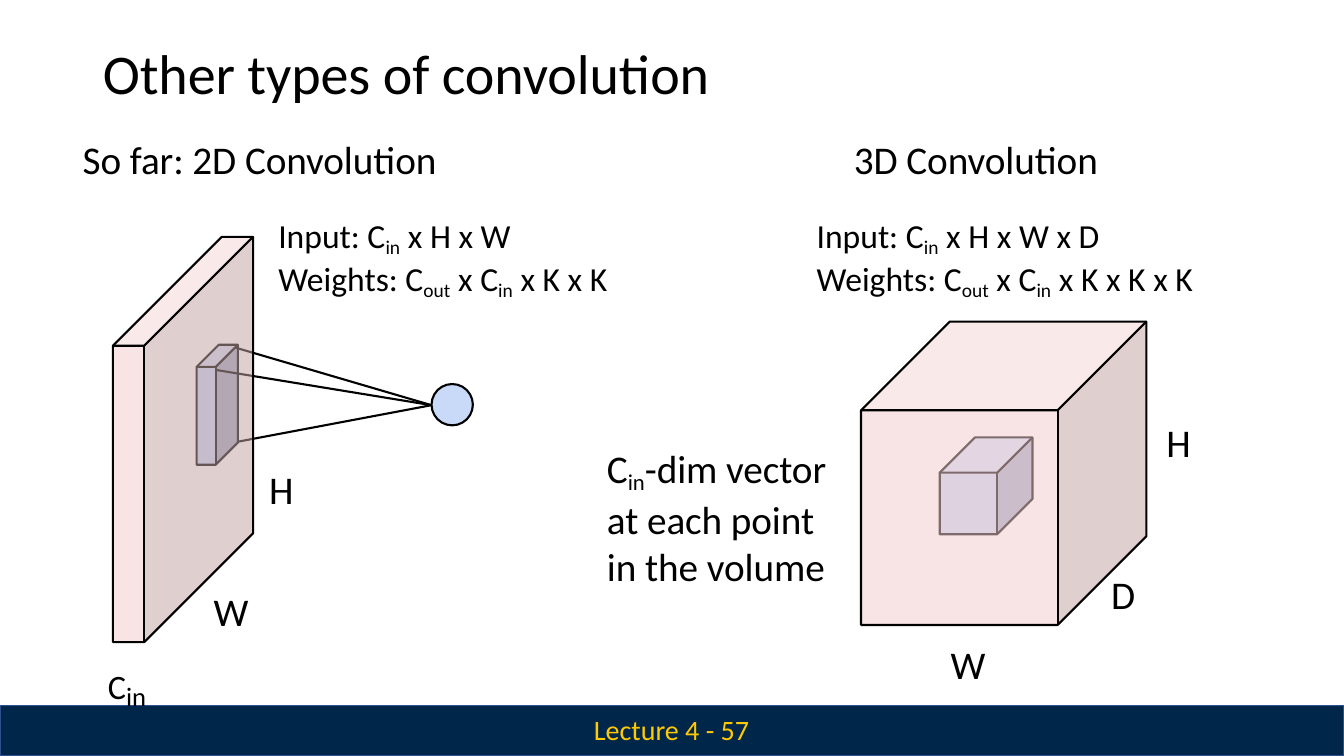
import pptx
import pptx.util
import pptx.dml.color
import pptx.enum.shapes
import pptx.oxml
import pptx.oxml.ns
from pptx.util import Inches

SHAPE = pptx.enum.shapes.MSO_SHAPE
RGB = pptx.dml.color.RGBColor.from_string
THEME = {
    "font": "Calibri", "ink": "000000", "gold": "FFC904",
    "navy": "00274A", "navy_edge": "2D518E", "blue": "C8DAF7",
    # Front, side and top of a block
    "kernel": ("C8DAF7", "A0ADC6", "D3DFF8"),
    "input": ("F3CCCC", "C4A3A3", "F6D5D5"),
    "title": 40, "body": 28, "detail": 24, "footer": 20,
    "raised": 42, "lowered": 19, "line": 1.5, "tight": -5,
}

prs = pptx.Presentation()
prs.slide_width, prs.slide_height = Inches(13.33), Inches(7.5)
s = prs.slides.add_slide(prs.slide_layouts[6])


def add_text(x, y, w, h, paragraphs, color="ink"):
    """Paragraphs are (indent, space before, size name, text); |x| is a subscript."""
    tf = s.shapes.add_textbox(Inches(x), Inches(y), Inches(w), Inches(h)).text_frame
    tf.word_wrap = True
    tf.margin_left = tf.margin_right = tf.margin_bottom = 0
    tf.margin_top = Inches(0.01)
    for i, (indent, before, size, text) in enumerate(paragraphs):
        p = tf.add_paragraph() if i else tf.paragraphs[0]
        p.space_before = pptx.util.Pt(before)
        p._p.get_or_add_pPr().set("marL", str(Inches(indent)))
        for j, part in enumerate(text.split("|")):
            r = p.add_run()
            r.text = part
            r.font.name = THEME["font"]
            r.font.size = pptx.util.Pt(THEME[size])
            r.font.color.rgb = RGB(THEME[color])
            if size in ("title", "body"):
                r.font._element.set("spc", str(THEME["tight"]))
            if j % 2:
                r.font._element.set("baseline", "-17000")
    return tf


def add_block(x, y, w, h, depth, kind, alpha=100):
    """Front face w by h with its top left at x, y, receding up and right by depth."""
    a, b, c, d = (x, y), (x + w, y), (x + w, y + h), (x, y + h)
    a2, b2, c2 = [(px + depth, py - depth) for px, py in (a, b, c)]
    faces = [[b, a, d, c, b], [b2, b, c, c2, b2], [b2, a2, a, b, b2]]
    edges = [[a, a2, b2, c2, c, d, a], [a, b, b2], [b, c]]
    for lines, fill in [*(([face], f) for face, f in zip(faces, THEME[kind])), (edges, None)]:
        lines = [[(Inches(px), Inches(py)) for px, py in line] for line in lines]
        builder = s.shapes.build_freeform(*lines[0][0])
        for i, line in enumerate(lines):
            if i:
                builder.move_to(*line[0])
            builder.add_line_segments(line[1:], close=line[0] == line[-1])
        sp = builder.convert_to_shape()
        sp.shadow.inherit = False
        if fill:
            sp.fill.solid()
            sp.fill.fore_color.rgb = RGB(fill)
            sp.line.fill.background()
            clr = sp._element.spPr.find(pptx.oxml.ns.qn("a:solidFill"))[0]
            clr.append(pptx.oxml.parse_xml(
                f'<a:alpha {pptx.oxml.ns.nsdecls("a")} val="{alpha * 1000}"/>'))
        else:
            sp.fill.background()
            sp.line.color.rgb = RGB(THEME["ink"])
            sp.line.width = pptx.util.Pt(THEME["line"])


# Footer bar and output neuron
for kind, x, y, w, h, fill, edge, width in [
        (SHAPE.RECTANGLE, 0, 7, 13.33, 0.5, "navy", "navy_edge", 1),
        (SHAPE.OVAL, 4.28, 3.81, 0.41, 0.41, "blue", "ink", THEME["line"])]:
    sp = s.shapes.add_shape(kind, Inches(x), Inches(y), Inches(w), Inches(h))
    sp.shadow.inherit = False
    sp.fill.solid()
    sp.fill.fore_color.rgb = RGB(THEME[fill])
    sp.line.color.rgb = RGB(THEME[edge])
    sp.line.width = pptx.util.Pt(width)
add_text(5.88, 7.06, 1.61, 0.34, [(0.01, 0, "footer", "Lecture 4 - 57")], "gold")

# Title
add_text(0.85, 0.37, 11.64, 0.76, [(0.17, 1, "title", "Other types of convolution")])

# 3D convolution: kernel inside the translucent volume
add_block(9.32, 4.69, 0.57, 0.61, 0.35, "kernel")
add_block(8.54, 4.07, 1.95, 2.13, 0.88, "input", 52)

# 2D convolution: kernel and rays behind the translucent input
add_block(1.95, 3.64, 0.19, 0.97, 0.22, "kernel")
for x, y in [(2.14, 3.67), (2.34, 3.45), (2.37, 4.38)]:
    ray = s.shapes.add_connector(pptx.enum.shapes.MSO_CONNECTOR.STRAIGHT,
                                 Inches(x), Inches(y), Inches(4.28), Inches(4.02))
    ray.line.color.rgb = RGB(THEME["ink"])
    ray.line.width = pptx.util.Pt(THEME["line"])
    ray._element.spPr.append(pptx.oxml.parse_xml(
        f'<a:effectLst {pptx.oxml.ns.nsdecls("a")}/>'))
add_block(1.12, 3.43, 0.31, 2.94, 1.08, "input", 52)

# Headings with input and weight shapes
add_text(0.79, 1.33, 5.31, 1.63, [
    (0.03, 1, "body", "So far: 2D Convolution"),
    (1.97, 23.4, "detail", "Input: C|in| x H x W"),
    (1.97, 0, "detail", "Weights: C|out| x C|in| x K x K")])
add_text(8.06, 1.33, 3.87, 1.63, [
    (0.41, 1, "body", "3D Convolution"),
    (0.04, 23.4, "detail", "Input: C|in| x H x W x D"),
    (0.04, 0, "detail", "Weights: C|out| x C|in| x K x K x K")])
add_text(5.98, 4.4, 2.29, 1.43, [
    (0.04, 1, "body", "C|in|-dim vector"),
    (0.04, 0, "body", "at each point"),
    (0.04, 0, "body", "in the volume")])

# Dimension labels
for x, y, w, name in [(2.11, 5.82, 0.37, "W"), (2.66, 4.61, 0.27, "H"), (9.42, 6.34, 0.37, "W"),
                      (11.01, 5.65, 0.27, "D"), (11.56, 4.14, 0.27, "H")]:
    add_text(x, y, w, 0.49, [(0.01, 1, "body", name)])

# Channel label: raised C beside a larger index
channel = add_text(1.03, 6.42, 0.49, 0.49, [(0.04, 1, "raised", "C|in")])
letter, index = channel.paragraphs[0].runs
letter.font._element.set("baseline", "12000")
index.font._element.set("baseline", "0")
index.font.size = pptx.util.Pt(THEME["lowered"])

prs.save("out.pptx")
